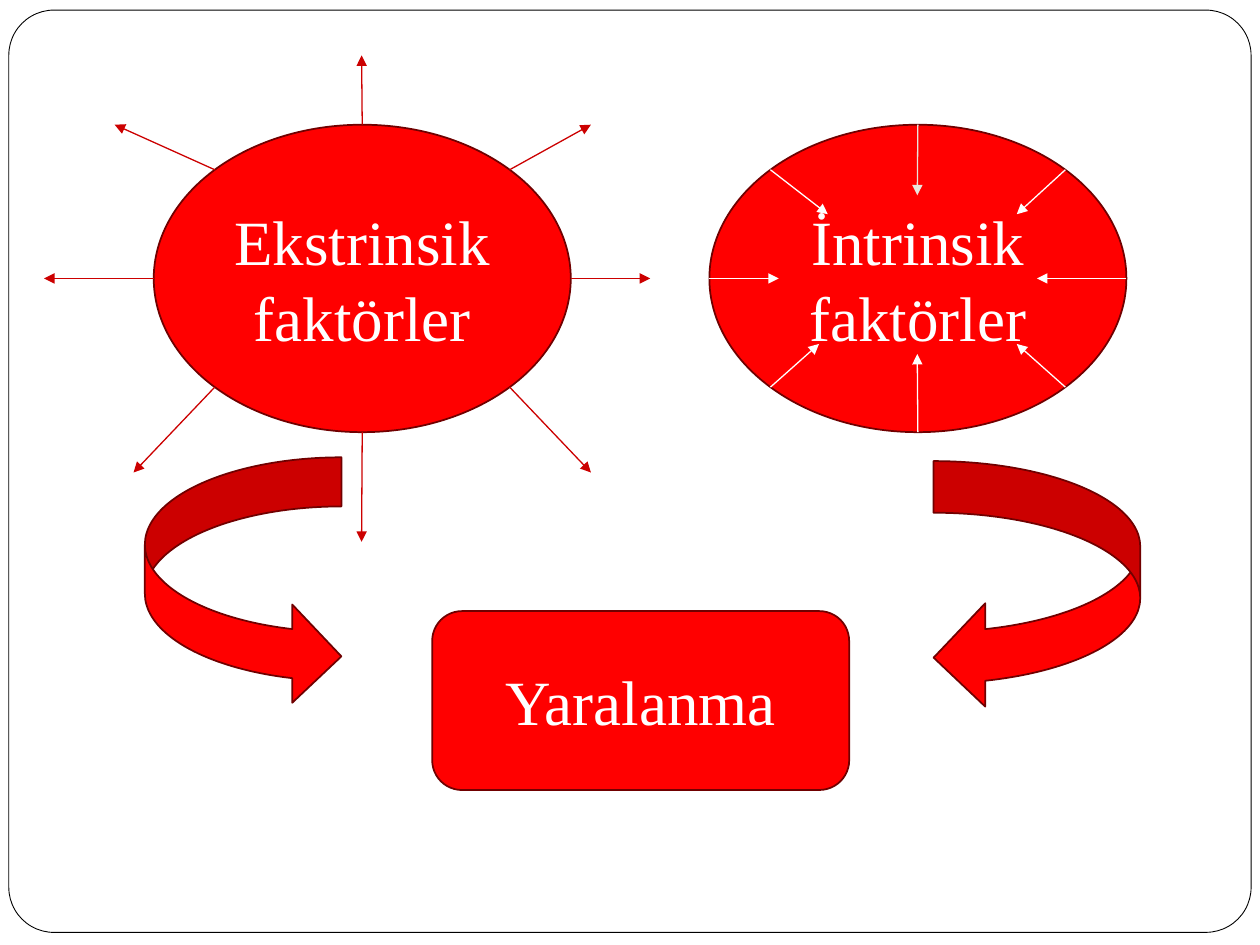
from math import cos, pi, sin
from typing import NamedTuple

from lxml.etree import SubElement
from pptx import Presentation
from pptx.dml.color import RGBColor
from pptx.enum.shapes import MSO_CONNECTOR, MSO_SHAPE
from pptx.enum.text import MSO_ANCHOR, PP_ALIGN
from pptx.oxml.ns import qn
from pptx.util import Inches, Pt

RED, DARK, RAY = "FF0000", "700000", "CC0000"
WHITE, CREAM, BLACK = "FFFFFF", "E9E5DC", "000000"


class Box(NamedTuple):
    kind: MSO_SHAPE
    left: float
    top: float
    width: float
    height: float
    text: str = ""
    fill: str = RED
    edge: str = DARK
    weight: float = 1


class Ray(NamedTuple):
    turn: int  # eighths of a circle, clockwise from the right
    x: float
    y: float
    color: str


def paint(form, color: str) -> None:
    form.rgb = RGBColor.from_string(color)


def draw_box(shapes, box: Box):
    shape = shapes.add_shape(
        box.kind, *(Inches(n) for n in (box.left, box.top, box.width, box.height))
    )
    shape.shadow.inherit = False
    shape.fill.solid()
    paint(shape.fill.fore_color, box.fill)
    paint(shape.line.color, box.edge)
    shape.line.width = Pt(box.weight)
    if box.text:
        frame = shape.text_frame
        frame.text = box.text
        frame.word_wrap = True
        frame.vertical_anchor = MSO_ANCHOR.MIDDLE
        para = frame.paragraphs[0]
        para.alignment = PP_ALIGN.CENTER
        font = para.runs[0].font
        font.name = "Times New Roman"
        font.size = Pt(36)
        paint(font.color, WHITE)
    return shape


def draw_ray(shapes, oval: Box, ray: Ray) -> None:
    """Draw an arrow from the rim of the oval to the tip of the ray."""
    angle = ray.turn * pi / 4
    x = oval.left + oval.width / 2 * (1 + cos(angle))
    y = oval.top + oval.height / 2 * (1 + sin(angle))
    line = shapes.add_connector(
        MSO_CONNECTOR.STRAIGHT, Inches(x), Inches(y), Inches(ray.x), Inches(ray.y)
    )
    paint(line.line.color, ray.color)
    line.line.width = Pt(0.75)
    SubElement(line.line._get_or_add_ln(), qn("a:tailEnd"), type="triangle")
    SubElement(line._element.spPr, qn("a:effectLst"))


FRAME = Box(MSO_SHAPE.ROUNDED_RECTANGLE, 0.07, 0.08, 9.86, 7.32,
            fill=WHITE, edge=BLACK, weight=0.5)
OUTER = Box(MSO_SHAPE.OVAL, 1.22, 0.99, 3.31, 2.44, "Ekstrinsik faktörler")
INNER = Box(MSO_SHAPE.OVAL, 5.63, 0.99, 3.31, 2.44, "İntrinsik faktörler")
RESULT = [
    Box(MSO_SHAPE.CURVED_RIGHT_ARROW, 1.15, 3.63, 1.56, 1.97),
    Box(MSO_SHAPE.CURVED_LEFT_ARROW, 7.41, 3.66, 1.64, 1.97),
    Box(MSO_SHAPE.ROUNDED_RECTANGLE, 3.43, 4.85, 3.31, 1.42, "Yaralanma"),
]

# Tips in clockwise order, starting at the right
OUT_TIPS = [(5.16, 2.21), (4.69, 3.75), (2.87, 4.3), (1.06, 3.75),
            (0.35, 2.21), (0.91, 0.99), (2.87, 0.44), (4.69, 0.99)]
IN_TIPS = [(8.23, 2.21), (8.07, 2.73), (7.28, 2.81), (6.5, 2.73),
           (6.18, 2.21), (6.57, 1.7), (7.28, 1.55), (8.07, 1.7)]
TOP = 6


def main() -> None:
    deck = Presentation()
    deck.slide_width, deck.slide_height = Inches(10), Inches(7.5)
    shapes = deck.slides.add_slide(deck.slide_layouts[6]).shapes

    # Page frame
    draw_box(shapes, FRAME).adjustments[0] = 0.049

    # Ovals of factors
    for oval in (OUTER, INNER):
        draw_box(shapes, oval)

    # Rays pointing out of one oval and into the other
    for turn, (x, y) in enumerate(OUT_TIPS):
        draw_ray(shapes, OUTER, Ray(turn, x, y, RAY))
    for turn, (x, y) in enumerate(IN_TIPS):
        color = CREAM if turn == TOP else WHITE
        draw_ray(shapes, INNER, Ray(turn, x, y, color))

    # Curved arrows and the result
    for box in RESULT:
        draw_box(shapes, box)

    deck.save("out.pptx")


if __name__ == "__main__":
    main()
